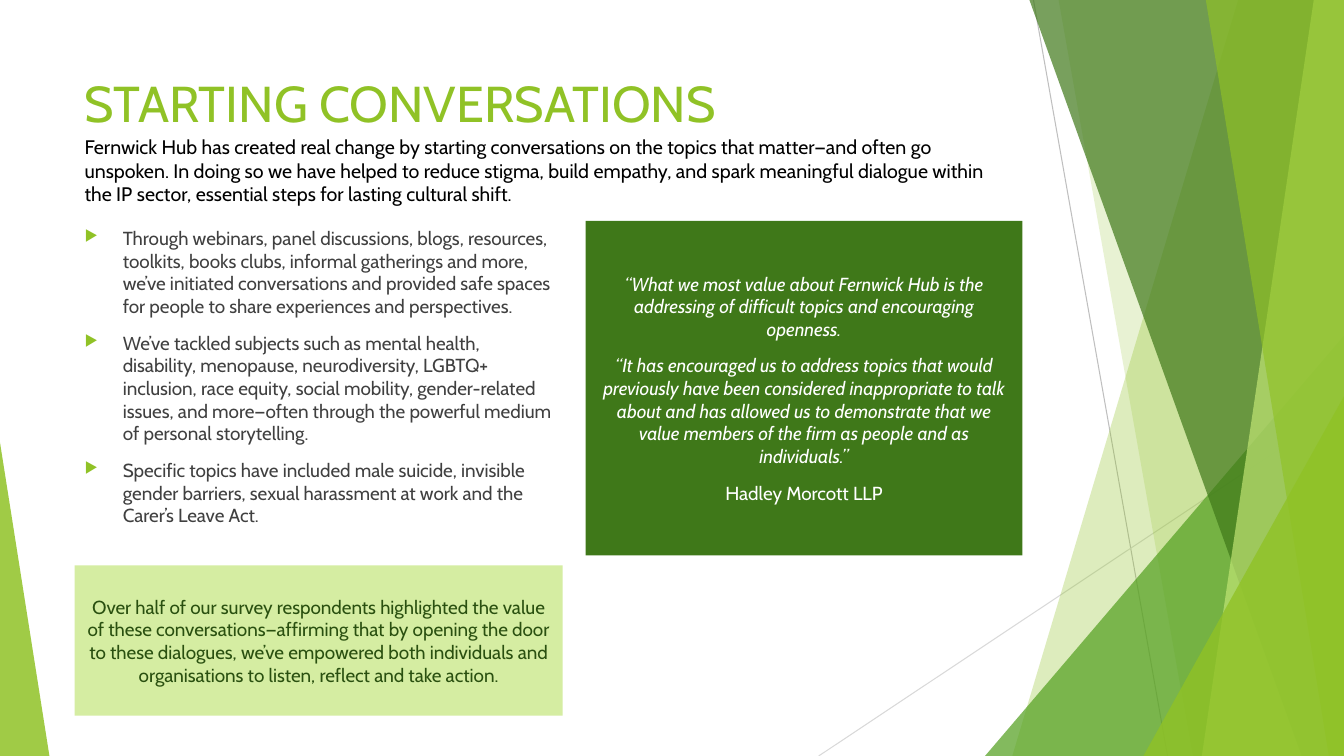
from lxml import etree
from pptx import Presentation
from pptx.dml.color import RGBColor
from pptx.enum.shapes import MSO_CONNECTOR, MSO_SHAPE
from pptx.enum.text import MSO_ANCHOR, PP_ALIGN
from pptx.oxml.ns import qn
from pptx.util import Inches, Pt

STRAIGHT = MSO_CONNECTOR.STRAIGHT
TRIANGLE = MSO_SHAPE.ISOSCELES_TRIANGLE
RECTANGLE = MSO_SHAPE.RECTANGLE
TOP, MIDDLE = MSO_ANCHOR.TOP, MSO_ANCHOR.MIDDLE
LEFT, CENTER = PP_ALIGN.LEFT, PP_ALIGN.CENTER

WIDTH, HEIGHT = 13.33, 7.5
FONT = "Cabin"
COLORS = {
    "lime": "90C226", "leaf": "54A021", "forest": "3F7819", "light": "C0E474",
    "pale": "D5EDA2", "deep": "2A5010", "gray": "BFBFBF", "silver": "D9D9D9",
    "body": "404040", "black": "000000", "white": "FFFFFF",
}

TITLE = ["STARTING CONVERSATIONS"]
INTRO = ["Fernwick Hub has created real change by starting conversations on the topics that matter—and often go unspoken. In doing so we have helped to reduce stigma, build empathy, and spark meaningful dialogue within the IP sector, essential steps for lasting cultural shift."]
BULLETS = [
    "Through webinars, panel discussions, blogs, resources, toolkits, books clubs, informal gatherings and more, we’ve initiated conversations and provided safe spaces for people to share experiences and perspectives.",
    "We’ve tackled subjects such as mental health, disability, menopause, neurodiversity, LGBTQ+ inclusion, race equity, social mobility, gender-related issues, and more—often through the powerful medium of personal storytelling.",
    "Specific topics have included male suicide, invisible gender barriers, sexual harassment at work and the Carer’s Leave Act.",
]
SURVEY = ["Over half of our survey respondents highlighted the value of these conversations—affirming that by opening the door to these dialogues, we’ve empowered both individuals and organisations to listen, reflect and take action."]
QUOTES = [
    "“What we most value about Fernwick Hub is the addressing of difficult topics and encouraging openness.",
    "“It has encouraged us to address topics that would previously have been considered inappropriate to talk about and has allowed us to demonstrate that we value members of the firm as people and as individuals.”",
    "Hadley Morcott LLP",
]

RAYS = [
    ((10.25, 0), (11.58, HEIGHT), "gray"),
    ((WIDTH, 4.03), (8.12, HEIGHT), "silver"),
]
# band: top x, bottom x; triangle: left, top, width, apex
FACETS = [
    ("band", (12.28, 10.04), "lime", 30),
    ("band", (10.5, 11.83), "lime", 20),
    ("triangle", (9.77, 3.33, 3.56, 1), "leaf", 72),
    ("band", (10.21, 12.91), "forest", 70),
    ("band", (13.03, 11.92), "light", 70),
    ("band", (11.96, 13.18), "lime", 65),
    ("triangle", (11.34, 3.93, 1.99, 1), "lime", 80),
    ("triangle", (0, 4.39, 0.49, 0), "lime", 85),
]


def paint(shape, color, opacity=100):
    """Give a shape a flat fill without line or shadow."""
    shape.shadow.inherit = False
    shape.line.fill.background()
    shape.fill.solid()
    shape.fill.fore_color.rgb = RGBColor.from_string(COLORS[color])
    if opacity < 100:
        rgb = shape.fill._xPr.find(".//" + qn("a:srgbClr"))
        etree.SubElement(rgb, qn("a:alpha"), val=str(opacity * 1000))


def add_ray(slide, start, end, color):
    """Draw a thin background line."""
    ray = slide.shapes.add_connector(STRAIGHT, *map(Inches, start + end))
    ray.line.color.rgb = RGBColor.from_string(COLORS[color])
    ray.line.width = Pt(0.75)
    etree.SubElement(ray._element.spPr, qn("a:effectLst"))


def add_facet(slide, kind, geometry, color, opacity):
    """Draw a translucent band to the right edge or a corner triangle."""
    if kind == "band":
        top, bottom = geometry
        corners = [(WIDTH, 0), (WIDTH, HEIGHT), (bottom, HEIGHT)]
        builder = slide.shapes.build_freeform(Inches(top), 0)
        builder.add_line_segments([(Inches(x), Inches(y)) for x, y in corners])
        facet = builder.convert_to_shape()
    else:
        left, top, width, apex = geometry
        facet = slide.shapes.add_shape(
            TRIANGLE, *map(Inches, (left, top, width, HEIGHT - top)))
        facet.adjustments[0] = apex
    paint(facet, color, opacity)


def add_bullet(paragraph):
    """Put a small green arrowhead before a paragraph."""
    properties = paragraph._p.get_or_add_pPr()
    properties.set("marL", str(Inches(0.38)))
    properties.set("indent", str(-Inches(0.38)))
    bullet_color = etree.SubElement(properties, qn("a:buClr"))
    etree.SubElement(bullet_color, qn("a:srgbClr"), val=COLORS["lime"])
    etree.SubElement(properties, qn("a:buSzPct"), val="80000")
    etree.SubElement(properties, qn("a:buChar"), char="▶")


def add_text(slide, box, lines, size, color, fill=None, bullets=False, italics=0):
    """Place paragraphs in a plain text box or a centred filled panel."""
    place = [Inches(length) for length in box]
    if fill:
        shape = slide.shapes.add_shape(RECTANGLE, *place)
        paint(shape, fill)
    else:
        shape = slide.shapes.add_textbox(*place)
    frame = shape.text_frame
    frame.word_wrap = True
    frame.vertical_anchor = MIDDLE if fill else TOP
    frame.text = "\n".join(lines)
    for index, paragraph in enumerate(frame.paragraphs):
        paragraph.alignment = CENTER if fill else LEFT
        if fill or bullets:
            paragraph.space_before = Pt(10)
        if bullets:
            add_bullet(paragraph)
        font = paragraph.runs[0].font
        font.name, font.size = FONT, Pt(size)
        font.italic = index < italics
        font.color.rgb = RGBColor.from_string(COLORS[color])


def main():
    """Build the slide and save it."""
    presentation = Presentation()
    presentation.slide_width = Inches(WIDTH)
    presentation.slide_height = Inches(HEIGHT)
    slide = presentation.slides.add_slide(presentation.slide_layouts[6])
    for ray in RAYS:
        add_ray(slide, *ray)
    for facet in FACETS:
        add_facet(slide, *facet)
    left, full, column = 0.74, 9.4, 4.84
    quote_width = 4.33
    quote_left = left + full - quote_width
    add_text(slide, (left, 0.67, full, 1.44), TITLE, 36, "lime")
    add_text(slide, (left, 1.29, full, 1.04), INTRO, 14, "black")
    add_text(slide, (left, 2.2, column, 3.33), BULLETS, 13.5, "body", bullets=True)
    add_text(slide, (left, 5.61, column, 1.49), SURVEY, 13.5, "deep", fill="pale")
    add_text(slide, (quote_left, 2.19, quote_width, 3.32), QUOTES, 13.5, "white",
             fill="forest", italics=2)
    presentation.save("out.pptx")


if __name__ == "__main__":
    main()
